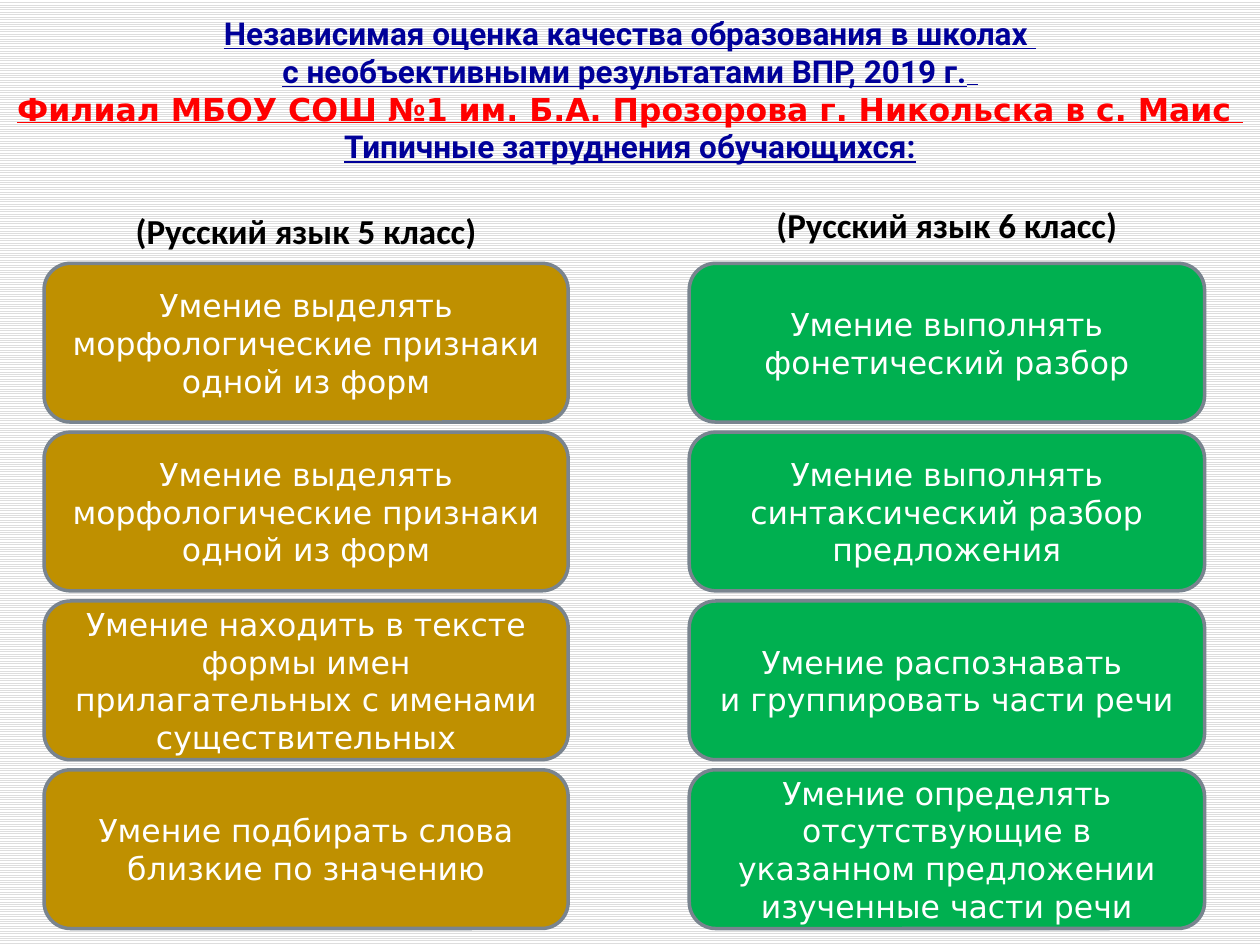
"""Build the slide on typical difficulties of pupils in Russian, grades 5 and 6."""
from pptx import Presentation
from pptx.dml.color import RGBColor
from pptx.enum import dml, shapes, text
from pptx.util import Inches, Pt

COLORS = {
    "stripe": "DDDDDD", "paper": "FFFFFF", "title": "000099", "school": "FF0000",
    "heading": "000000", "card_text": "FFFFFF", "outline": "79848F",
    "grade_5": "BF9000", "grade_6": "00B050",
}
TITLE_LINES = [
    [("Независимая оценка качества образования в школах ", "Roboto", "title")],
    [("с необъективными результатами ВПР, 2019 г.", "Roboto", "title"),
     (" ", "DejaVu Sans", "title")],
    [("Филиал МБОУ СОШ №1 им. Б.А. Прозорова г. Никольска в с. Маис ",
      "DejaVu Sans", "school")],
    [("Типичные затруднения обучающихся:", "Roboto", "title")],
]
TITLE_BOX = (0, -0.16, 10, 1.52)
COLUMNS = [
    {"heading": "(Русский язык 5 класс)", "heading_box": (0.94, 1.51, 2.98, 0.68),
     "fill": "grade_5", "left": 0.35, "width": 4.16,
     "cards": [["Умение выделять морфологические признаки одной из форм"],
               ["Умение выделять морфологические признаки одной из форм"],
               ["Умение находить в тексте формы имен прилагательных "
                "с именами существительных"],
               ["Умение подбирать слова близкие по значению"]]},
    {"heading": "(Русский язык 6 класс)", "heading_box": (6.06, 1.5, 2.91, 0.6),
     "fill": "grade_6", "left": 5.47, "width": 4.09,
     "cards": [["Умение выполнять фонетический разбор"],
               ["Умение выполнять синтаксический разбор предложения"],
               ["Умение распознавать ", "и группировать части речи"],
               ["Умение определять отсутствующие в указанном предложении "
                "изученные части речи"]]},
]
CARD_TOP, CARD_HEIGHT, CARD_STEP = 2.09, 1.26, 1.34


def color(name):
    return RGBColor.from_string(COLORS[name])


def set_font(font, name, color_name, **values):
    for key, value in {"name": name, **values}.items():
        setattr(font, key, value)
    font.color.rgb = color(color_name)


def prepare(shape, anchor):
    frame = shape.text_frame
    frame.word_wrap = True
    frame.vertical_anchor = anchor
    return frame


def add_text_box(slide, box, anchor):
    shape = slide.shapes.add_textbox(*map(Inches, box))
    paragraph = prepare(shape, anchor).paragraphs[0]
    paragraph.alignment = text.PP_ALIGN.CENTER
    return paragraph


def add_title(slide):
    paragraph = add_text_box(slide, TITLE_BOX, text.MSO_ANCHOR.BOTTOM)
    for index, line in enumerate(TITLE_LINES):
        if index:
            paragraph.add_line_break()
        for words, font_name, color_name in line:
            run = paragraph.add_run()
            run.text = words
            set_font(run.font, font_name, color_name, size=Pt(18), bold=True, underline=True)


def add_heading(slide, column):
    paragraph = add_text_box(slide, column["heading_box"], text.MSO_ANCHOR.MIDDLE)
    paragraph.line_spacing = 0.9
    run = paragraph.add_run()
    run.text = column["heading"]
    set_font(run.font, "Calibri", "heading", size=Pt(20), bold=True)


def add_card(slide, column, row, lines):
    box = (column["left"], CARD_TOP + row * CARD_STEP, column["width"], CARD_HEIGHT)
    shape = slide.shapes.add_shape(shapes.MSO_SHAPE.ROUNDED_RECTANGLE, *map(Inches, box))
    shape.shadow.inherit = False
    shape.fill.solid()
    shape.fill.fore_color.rgb = color(column["fill"])
    shape.line.color.rgb = color("outline")
    shape.line.width = Pt(2)
    frame = prepare(shape, text.MSO_ANCHOR.MIDDLE)
    frame.text = "\n".join(lines)
    for paragraph in frame.paragraphs:
        paragraph.alignment = text.PP_ALIGN.CENTER
        for run in paragraph.runs:
            set_font(run.font, "DejaVu Sans", "card_text", size=Pt(18))


def main():
    presentation = Presentation()
    presentation.slide_width, presentation.slide_height = Inches(10), Inches(7.5)
    slide = presentation.slides.add_slide(presentation.slide_layouts[6])
    background = slide.background.fill
    background.patterned()
    background.pattern = dml.MSO_PATTERN.LIGHT_HORIZONTAL
    background.fore_color.rgb = color("stripe")
    background.back_color.rgb = color("paper")
    add_title(slide)
    for column in COLUMNS:
        add_heading(slide, column)
        for row, lines in enumerate(column["cards"]):
            add_card(slide, column, row, lines)
    presentation.save("out.pptx")


if __name__ == "__main__":
    main()
